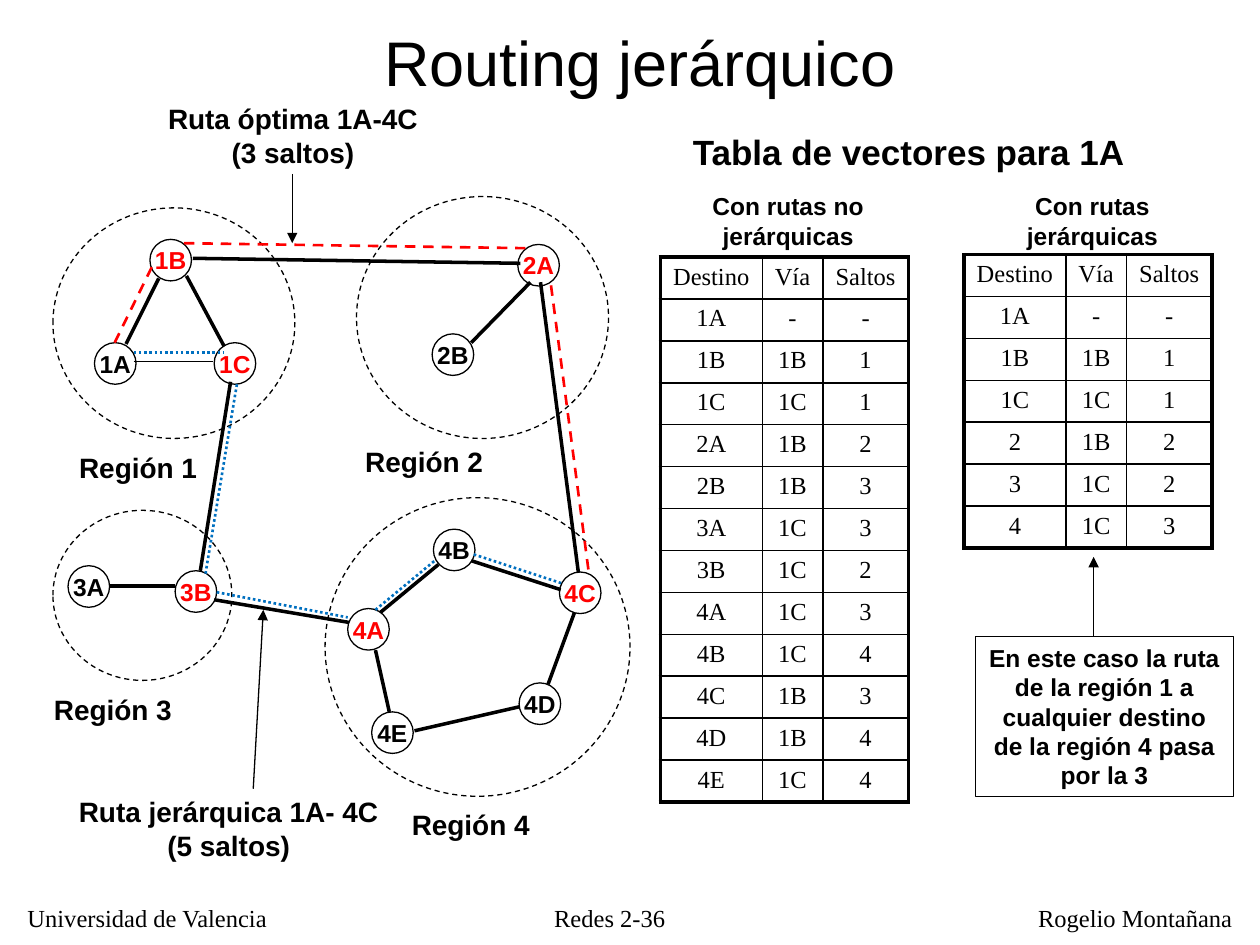
"""Hierarchical routing slide: network map, two routing tables and notes on a 100 x 75 grid."""
from lxml import etree
from pptx import Presentation, util as u
from pptx.dml.color import RGBColor
from pptx.enum import dml, shapes, text
from pptx.oxml import ns

BLACK = RGBColor(0x00, 0x00, 0x00)
RED = RGBColor(0xFF, 0x00, 0x00)
BLUE = RGBColor(0x00, 0x70, 0xC0)
SANS, SERIF = "Arial", "Times New Roman"
LEFT, CENTER = text.PP_ALIGN.LEFT, text.PP_ALIGN.CENTER
DASH, DOT = dml.MSO_LINE.DASH, dml.MSO_LINE.ROUND_DOT
OVAL = shapes.MSO_SHAPE.OVAL

prs = Presentation()
prs.slide_width, prs.slide_height = u.Inches(10), u.Inches(7.5)
COL, ROW = prs.slide_width / 100, prs.slide_height / 75
s = prs.slides.add_slide(prs.slide_layouts[6])


def write(tf, words, size, bold=True, font=SANS, color=BLACK, align=CENTER, wrap=False):
    tf.text = words
    tf.word_wrap = wrap
    for p in tf.paragraphs:
        p.alignment = align
        p.font.name, p.font.size, p.font.bold = font, u.Pt(size), bold
        p.font.color.rgb = color


def connect(x1, y1, x2, y2, width=2, color=BLACK, dash=None, arrow=False):
    c = s.shapes.add_connector(shapes.MSO_CONNECTOR.STRAIGHT, int(x1 * COL), int(y1 * ROW),
                               int(x2 * COL), int(y2 * ROW))
    c.line.color.rgb, c.line.width = color, u.Pt(width)
    if dash:
        c.line.dash_style = dash
    if arrow:
        etree.SubElement(c.line._get_or_add_ln(), ns.qn("a:tailEnd"), type="triangle")
    etree.SubElement(c._element.spPr, ns.qn("a:effectLst"))


regions = [(4.2, 16.5, 19.2, 18.3), (28.3, 15.6, 20, 19.2),
           (4.2, 40.5, 14.2, 13.5), (25.8, 39.5, 24.2, 23.7)]
for x, y, w, h in regions:
    sp = s.shapes.add_shape(OVAL, int(x * COL), int(y * ROW), int(w * COL), int(h * ROW))
    sp.shadow.inherit = False
    sp.fill.background()
    sp.line.color.rgb, sp.line.width, sp.line.dash_style = BLACK, u.Pt(0.75), DASH

links = [(42.9, 22.4, 45.9, 45.4), (27.7, 49.4, 17, 47.6), (15.9, 45.3, 18.3, 30.3),
         (15.3, 20.5, 41.3, 20.9), (12.6, 22.1, 10, 27.3), (14.8, 21.9, 17.8, 27.5),
         (8.7, 46.5, 13.9, 46.5), (30.2, 48.6, 34.8, 44.8), (45.6, 48.6, 43.5, 54.3),
         (29.8, 51.6, 30.9, 56.5), (32.9, 58, 41.2, 56.1), (42.1, 22.4, 37.4, 27.2),
         (37.4, 44.5, 44.5, 46.8)]
for ends in links:
    connect(*ends)
connect(10.6, 28.7, 16.9, 28.7, 0.75)

nodes = {"1A": (7.5, 27.2), "1B": (11.9, 19), "1C": (17, 27.2), "2A": (41.1, 19.4),
         "2B": (34.3, 26.5), "3A": (5.4, 44.9), "3B": (13.9, 45.3), "4A": (27.6, 48.3),
         "4B": (34.4, 42), "4C": (44.4, 45.4), "4D": (41.2, 54.2), "4E": (29.5, 56.5)}
on_route = {"1B", "1C", "2A", "3B", "4A", "4C"}
for name, (x, y) in nodes.items():
    sp = s.shapes.add_shape(OVAL, int(x * COL), int(y * ROW), int(3.3 * COL), int(3.3 * ROW))
    sp.shadow.inherit = False
    sp.fill.background()
    sp.line.color.rgb, sp.line.width = BLACK, u.Pt(0.75)
    tf = sp.text_frame
    tf.margin_left = tf.margin_right = tf.margin_top = tf.margin_bottom = 0
    tf.vertical_anchor = text.MSO_ANCHOR.MIDDLE
    write(tf, name, 14, color=RED if name in on_route else BLACK)

hierarchical_route = [(10.6, 28, 17.7, 28), (18.8, 30.5, 16.3, 45.6), (17.2, 47, 27.6, 49),
                      (29.8, 48.4, 34.5, 44.5), (37.6, 44, 44.6, 46.3)]
for ends in hierarchical_route:
    connect(*ends, 1.5, BLUE, DOT)
optimal_route = [(9.1, 27.2, 12.2, 20.9), (14.6, 19.3, 41.7, 19.7), (46.7, 45.2, 43.7, 22.4)]
for ends in optimal_route:
    connect(*ends, 1.5, RED, DASH)
for ends in [(86.8, 50.5, 86.8, 44.2), (20.1, 62.6, 20.9, 48.4), (23.2, 13.8, 23.2, 19.3)]:
    connect(*ends, 0.75, arrow=True)

labels = [
    (29.5, 1.4, 42.6, 7, "Routing jerárquico", 36, False, SANS, LEFT, False),
    (54, 9.9, 36.4, 4.3, "Tabla de vectores para 1A", 20, True, SANS, LEFT, False),
    (54.7, 14.7, 15.7, 5.7, "Con rutas no jerárquicas", 14, True, SANS, CENTER, True),
    (79.1, 14.7, 15.2, 5.7, "Con rutas jerárquicas", 14, True, SANS, CENTER, True),
    (5.3, 35.3, 11.4, 3.7, "Región 1", 16, True, SANS, LEFT, False),
    (28, 34.8, 11.4, 3.7, "Región 2", 16, True, SANS, LEFT, False),
    (3.3, 54.5, 11.4, 3.7, "Región 3", 16, True, SANS, LEFT, False),
    (31.7, 63.6, 11.4, 3.7, "Región 4", 16, True, SANS, LEFT, False),
    (5.1, 62.6, 26.1, 6.4, "Ruta jerárquica 1A- 4C\n(5 saltos)", 16, True, SANS, CENTER, False),
    (12.2, 7.6, 22.1, 6.4, "Ruta óptima 1A-4C\n(3 saltos)", 16, True, SANS, CENTER, False),
    (1.2, 71.2, 21.3, 3.3, "Universidad de Valencia", 14, False, SERIF, LEFT, False),
    (42.1, 71.2, 12.6, 3.1, "Redes 2-36", 14, False, SERIF, CENTER, False),
    (81.4, 71.2, 17.4, 3.3, "Rogelio Montañana", 14, False, SERIF, LEFT, False),
]
for x, y, w, h, words, size, bold, font, align, wrap in labels:
    sp = s.shapes.add_textbox(int(x * COL), int(y * ROW), int(w * COL), int(h * ROW))
    write(sp.text_frame, words, size, bold, font, align=align, wrap=wrap)

sp = s.shapes.add_shape(shapes.MSO_SHAPE.RECTANGLE, int(77.4 * COL), int(50.5 * ROW),
                        int(20.5 * COL), int(12.7 * ROW))
sp.shadow.inherit = False
sp.fill.background()
sp.line.color.rgb, sp.line.width = BLACK, u.Pt(0.75)
write(sp.text_frame, "En este caso la ruta de la región 1 a cualquier destino "
      "de la región 4 pasa por la 3", 14, wrap=True)

header = "Destino Vía Saltos"
shared = [header, "1A - -", "1B 1B 1", "1C 1C 1"]
flat_routes = shared + ["2A 1B 2", "2B 1B 3", "3A 1C 3", "3B 1C 2", "4A 1C 3",
                        "4B 1C 4", "4C 1B 3", "4D 1B 4", "4E 1C 4"]
region_routes = shared + ["2 1B 2", "3 1C 2", "4 1C 3"]
widths, row_height = (8.1, 4.8, 6.8), 3.33
for x, y, rows in [(52.4, 20.4, flat_routes), (76.5, 20.2, region_routes)]:
    last = len(rows) - 1
    t = s.shapes.add_table(len(rows), 3, int(x * COL), int(y * ROW), int(sum(widths) * COL),
                           int(len(rows) * row_height * ROW)).table
    t.first_row = t.horz_banding = False
    for column, w in zip(t.columns, widths):
        column.width = int(w * COL)
    for i, row in enumerate(rows):
        t.rows[i].height = int(row_height * ROW)
        for j, value in enumerate(row.split()):
            cell = t.cell(i, j)
            cell.margin_left = cell.margin_right = int(0.3 * COL)
            cell.margin_top, cell.margin_bottom = int(0.3 * ROW), int(0.5 * ROW)
            cell.vertical_anchor = text.MSO_ANCHOR.MIDDLE
            write(cell.text_frame, value, 14, False, SERIF, wrap=True)
            cell.fill.background()
            outer = {"lnL": j == 0, "lnR": j == 2, "lnT": i == 0, "lnB": i == last}
            for k, (side, thick) in enumerate(outer.items()):
                ln = etree.Element(ns.qn("a:" + side), w=str(u.Pt(2.25 if thick else 1)))
                fill = etree.SubElement(ln, ns.qn("a:solidFill"))
                etree.SubElement(fill, ns.qn("a:srgbClr"), val=str(BLACK))
                cell._tc.get_or_add_tcPr().insert(k, ln)

prs.save("out.pptx")
